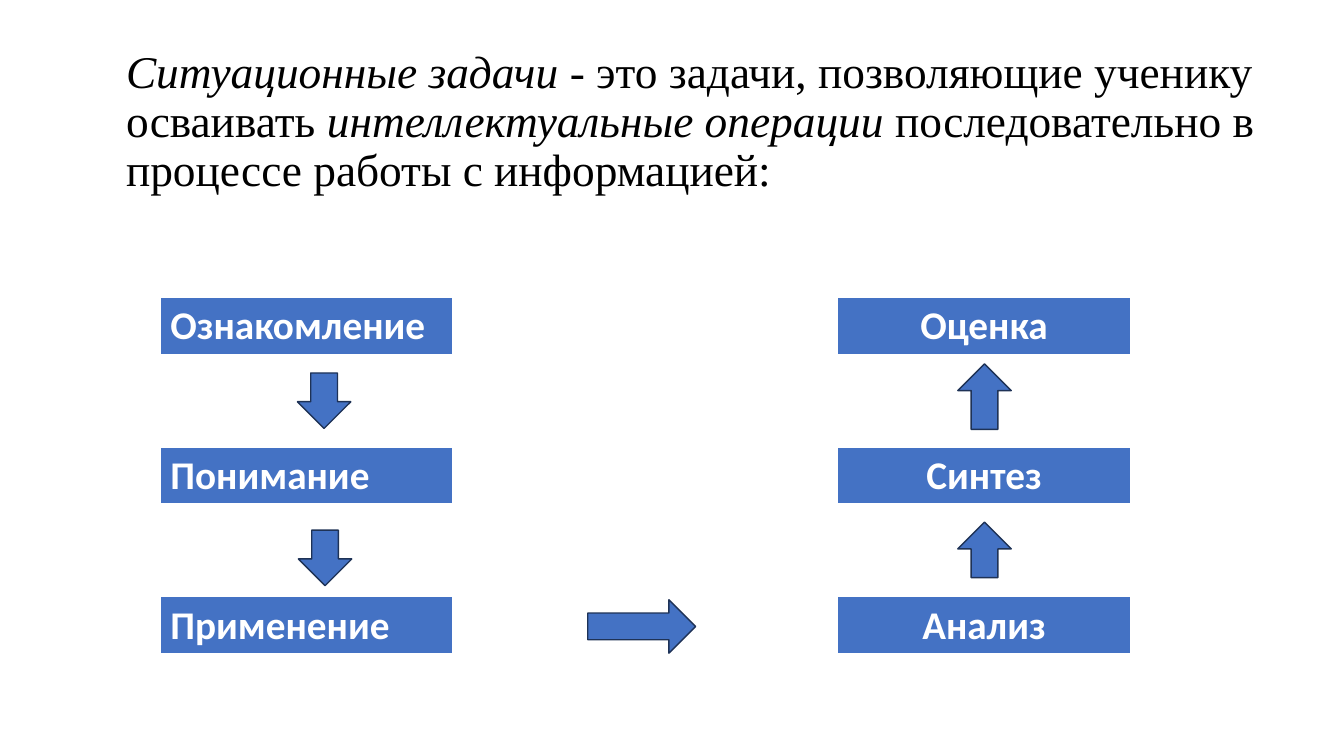
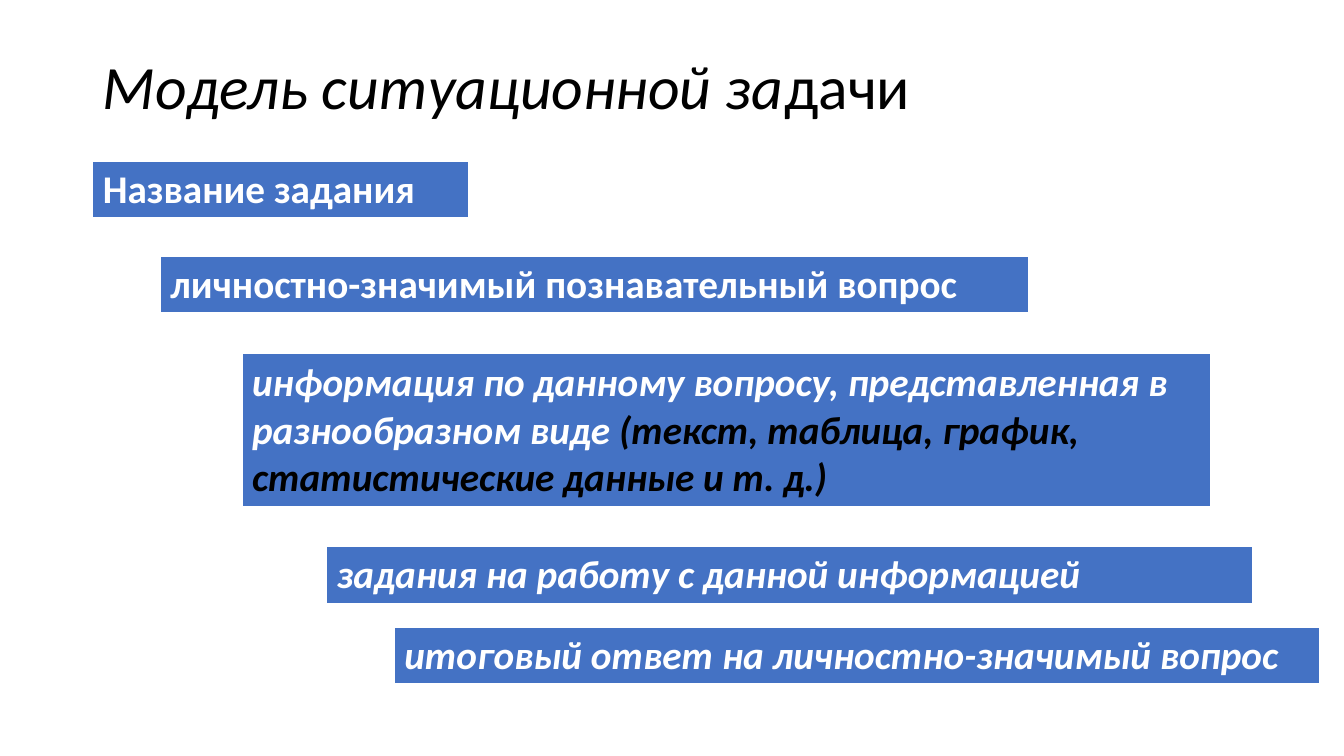
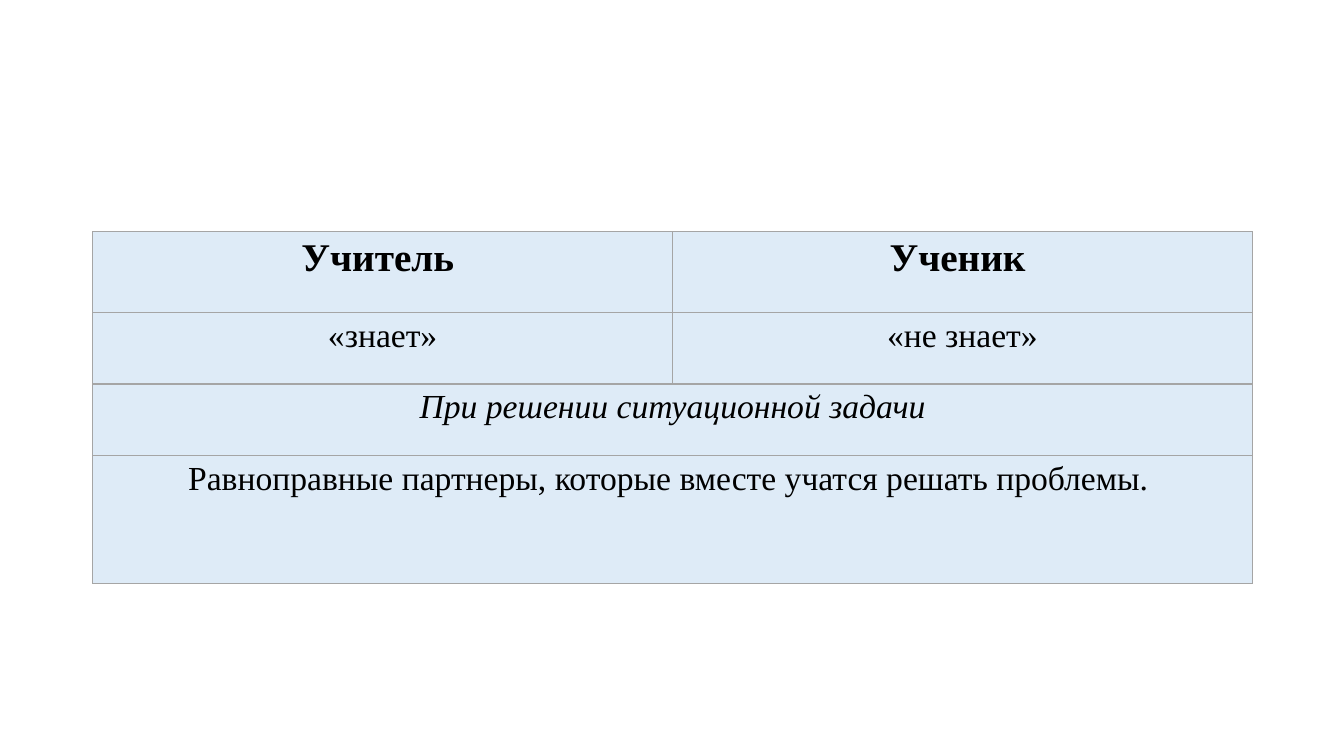
from lxml import etree
from pptx import Presentation
from pptx.dml.color import RGBColor
from pptx.enum.shapes import MSO_SHAPE
from pptx.enum.text import MSO_ANCHOR, MSO_AUTO_SIZE, PP_ALIGN
from pptx.oxml.ns import qn
from pptx.util import Inches, Pt

LEFT, CENTER = PP_ALIGN.LEFT, PP_ALIGN.CENTER
MIDDLE, NO_FIT = MSO_ANCHOR.MIDDLE, MSO_AUTO_SIZE.NONE
DOWN, RIGHT, UP = MSO_SHAPE.DOWN_ARROW, MSO_SHAPE.RIGHT_ARROW, MSO_SHAPE.UP_ARROW

BLUE = RGBColor(0x44, 0x72, 0xC4)
NAVY = RGBColor(0x1E, 0x32, 0x56)
PALE = RGBColor(0xDE, 0xEB, 0xF7)
GRAY = RGBColor(0xA5, 0xA5, 0xA5)
WHITE = RGBColor(0xFF, 0xFF, 0xFF)
BLACK = RGBColor(0, 0, 0)
SANS, SERIF = "Calibri", "Times New Roman"
BOX_BORDERS = {"L": (WHITE, 1), "R": (WHITE, 1), "T": (WHITE, 1), "B": (WHITE, 3)}
GRID_BORDERS = {side: (GRAY, 1) for side in "LRTB"}
ROMAN, ITALIC = {"italic": False}, {"italic": True}

DEFINITION = [
    ("Ситуационные задачи", ITALIC),
    (" - это задачи, позволяющие ученику осваивать ", ROMAN),
    ("интеллектуальные операции ", ITALIC),
    ("последовательно в процессе работы с информацией:", ROMAN),
]
STEP_COLUMNS = [
    (1.59, LEFT, ["Ознакомление", "Понимание", "Применение"]),
    (8.31, CENTER, ["Оценка", "Синтез", "Анализ"]),
]
STEP_TOP, STEP_GAP, STEP_WIDTH, BOX_HEIGHT = 2.95, 1.485, 2.9, 0.57
ARROWS = [
    (DOWN, 2.95, 3.7, 0.53, 0.55),
    (DOWN, 2.96, 5.26, 0.53, 0.55),
    (RIGHT, 5.83, 5.95, 1.07, 0.53),
    (UP, 9.5, 5.18, 0.53, 0.55),
    (UP, 9.5, 3.61, 0.53, 0.65),
]

MODEL_TITLE = [("Модель ситуационной за", ITALIC), ("дачи", ROMAN)]
MODEL_PARTS = [
    (0.92, 1.6, 3.73, BOX_HEIGHT, [("Название задания", ROMAN)]),
    (1.59, 2.54, 8.61, BOX_HEIGHT, [("личностно-значимый познавательный вопрос", ROMAN)]),
    (2.4, 3.51, 9.61, 1.5, [
        ("информация по данному вопросу, представленная в разнообразном виде ", ITALIC),
        ("(текст, таблица, график, статистические данные и т. д.)",
         {"italic": True, "color": BLACK}),
    ]),
    (3.24, 5.42, 9.18, BOX_HEIGHT, [("задания на работу с данной информацией", ITALIC)]),
    (3.91, 6.22, 9.18, BOX_HEIGHT, [("итоговый ответ на личностно-значимый вопрос", ITALIC)]),
]

ROLE_ROWS = [
    (0.8, ["Учитель ", "Ученик "], {"size": 28, "bold": True}),
    (0.71, ["«знает»", "«не знает»"], {}),
    (0.71, ["При решении ситуационной задачи"], ITALIC),
    (1.27, ["Равноправные партнеры, которые вместе учатся решать проблемы. "], {}),
]


def add_run(p, text, size=24, font=SANS, color=BLACK, bold=False, italic=False):
    r = p.add_run()
    r.text = text
    r.font.size, r.font.name = Pt(size), font
    r.font.bold, r.font.italic = bold, italic
    r.font.color.rgb = color


def add_runs(p, runs, align=LEFT, **base):
    p.alignment = align
    for text, style in runs:
        add_run(p, text, **{**base, **style})


def set_title(s, runs, left, top, width, height, **base):
    sp = s.shapes.title
    sp.left, sp.top, sp.width, sp.height = map(Inches, (left, top, width, height))
    tf = sp.text_frame
    tf.word_wrap, tf.auto_size, tf.vertical_anchor = True, NO_FIT, MIDDLE
    p = tf.paragraphs[0]
    p.line_spacing = 0.9
    add_runs(p, runs, **base)


def style_cell(cell, fill, borders):
    tc_pr = cell._tc.get_or_add_tcPr()
    for side, (color, width) in borders.items():
        ln = etree.SubElement(tc_pr, qn(f"a:ln{side}"), w=str(Pt(width)))
        solid = etree.SubElement(ln, qn("a:solidFill"))
        etree.SubElement(solid, qn("a:srgbClr"), val=str(color))
    cell.fill.solid()
    cell.fill.fore_color.rgb = fill


def add_grid(s, left, top, width, heights, cols, fill, borders):
    table = s.shapes.add_table(len(heights), cols, Inches(left), Inches(top),
                               Inches(width), Inches(sum(heights))).table
    table.first_row = table.horz_banding = False
    for row, height in zip(table.rows, heights):
        row.height = Inches(height)
        for cell in row.cells:
            style_cell(cell, fill, borders)
    return table


def add_box(s, left, top, width, height, runs, align=LEFT):
    table = add_grid(s, left, top, width, [height], 1, BLUE, BOX_BORDERS)
    p = table.cell(0, 0).text_frame.paragraphs[0]
    add_runs(p, runs, align, size=28, color=WHITE, bold=True)


def add_arrow(s, kind, *box):
    sp = s.shapes.add_shape(kind, *map(Inches, box))
    sp.shadow.inherit = False
    sp.fill.solid()
    sp.fill.fore_color.rgb = BLUE
    sp.line.color.rgb = NAVY
    sp.line.width = Pt(1)


def build_steps(prs):
    s = prs.slides.add_slide(prs.slide_layouts[5])
    set_title(s, DEFINITION, 1.15, 0.42, 11.5, 1.6, size=32.4, font=SERIF)
    for left, align, steps in STEP_COLUMNS:
        for i, step in enumerate(steps):
            add_box(s, left, STEP_TOP + i * STEP_GAP, STEP_WIDTH, BOX_HEIGHT,
                    [(step, ROMAN)], align)
    for arrow in ARROWS:
        add_arrow(s, *arrow)


def build_model(prs):
    s = prs.slides.add_slide(prs.slide_layouts[5])
    set_title(s, MODEL_TITLE, 0.92, 0.4, 11.5, 0.98, size=44)
    for part in MODEL_PARTS:
        add_box(s, *part)


def build_roles(prs):
    s = prs.slides.add_slide(prs.slide_layouts[6])
    heights = [height for height, _, _ in ROLE_ROWS]
    table = add_grid(s, 0.92, 2.3, 11.5, heights, 2, PALE, GRID_BORDERS)
    for i, (_, texts, style) in enumerate(ROLE_ROWS):
        if len(texts) == 1:
            table.cell(i, 0).merge(table.cell(i, 1))
        for j, text in enumerate(texts):
            p = table.cell(i, j).text_frame.paragraphs[0]
            add_runs(p, [(text, style)], CENTER, font=SERIF)


def main():
    prs = Presentation()
    prs.slide_width, prs.slide_height = Inches(13.33), Inches(7.5)
    build_steps(prs)
    build_model(prs)
    build_roles(prs)
    prs.save("out.pptx")


if __name__ == "__main__":
    main()
